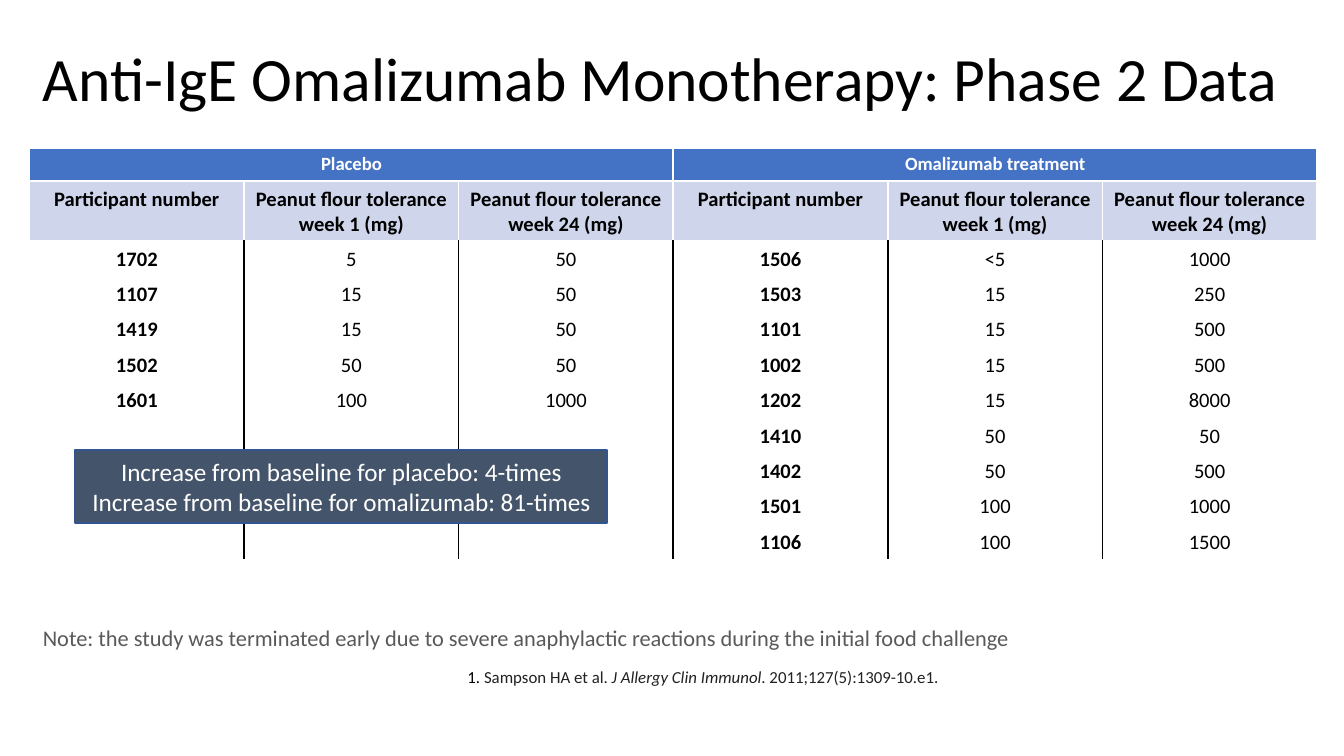
"""Build the omalizumab phase 2 data slide with its tolerance table."""
from itertools import zip_longest

from lxml import etree
from pptx import Presentation
from pptx.dml.color import RGBColor
from pptx.enum.shapes import MSO_SHAPE
from pptx.enum.text import MSO_ANCHOR, PP_ALIGN
from pptx.oxml.ns import qn
from pptx.util import Inches, Pt

CENTER, LEFT = PP_ALIGN.CENTER, PP_ALIGN.LEFT
MIDDLE, TOP = MSO_ANCHOR.MIDDLE, MSO_ANCHOR.TOP
RECTANGLE = MSO_SHAPE.RECTANGLE
FONT = "Calibri"
BLACK = RGBColor(0x00, 0x00, 0x00)
WHITE = RGBColor(0xFF, 0xFF, 0xFF)
BLUE = RGBColor(0x44, 0x72, 0xC4)
PALE_BLUE = RGBColor(0xCF, 0xD5, 0xEA)
SLATE = RGBColor(0x44, 0x54, 0x6A)
NAVY = RGBColor(0x32, 0x54, 0x91)
GRAY = RGBColor(0x59, 0x59, 0x59)
INK = RGBColor(0x21, 0x21, 0x21)

SLIDE_W = 10
SLIDE_H = SLIDE_W * 9 / 16
MARGIN, CONTENT_W = 0.22, 9.58
TABLE_TOP = 1.1
GROUP_H, HEADING_H, ROW_H = 0.24, 0.42, 0.26

TITLE = "Anti-IgE Omalizumab Monotherapy: Phase 2 Data"
NOTE = ("Note: the study was terminated early due to severe anaphylactic "
        "reactions during the initial food challenge")
CITATION = [
    ("1. ", BLACK, False),
    ("Sampson HA et al.\u00a0", INK, False),
    ("J Allergy Clin Immunol", INK, True),
    (". 2011;127(5):1309-10.e1.", INK, False),
]
SUMMARY = [
    "Increase from baseline for placebo: 4-times",
    "Increase from baseline for omalizumab: 81-times",
]
HEADINGS = [
    "Participant number",
    "Peanut flour tolerance week 1 (mg)",
    "Peanut flour tolerance week 24 (mg)",
]
GROUPS = {
    "Placebo": [
        ("1702", "5", "50"),
        ("1107", "15", "50"),
        ("1419", "15", "50"),
        ("1502", "50", "50"),
        ("1601", "100", "1000"),
    ],
    "Omalizumab treatment": [
        ("1506", "<5", "1000"),
        ("1503", "15", "250"),
        ("1101", "15", "500"),
        ("1002", "15", "500"),
        ("1202", "15", "8000"),
        ("1410", "50", "50"),
        ("1402", "50", "500"),
        ("1501", "100", "1000"),
        ("1106", "100", "1500"),
    ],
}


def add_run(p, text, size, color, bold=False, italic=False):
    r = p.add_run()
    r.text = text
    r.font.name, r.font.size = FONT, Pt(size)
    r.font.bold, r.font.italic = bold, italic
    r.font.color.rgb = color


def add_text(slide, box, runs, size, anchor=TOP):
    tf = slide.shapes.add_textbox(*map(Inches, box)).text_frame
    tf.word_wrap = True
    tf.vertical_anchor = anchor
    p = tf.paragraphs[0]
    p.alignment, p.line_spacing = LEFT, 0.9
    for text, color, italic in runs:
        add_run(p, text, size, color, italic=italic)


def set_border(cell, side, color):
    tc_pr = cell._tc.get_or_add_tcPr()
    ln = etree.SubElement(tc_pr, qn(f"a:ln{side}"), w=str(Pt(1)))
    if color is None:
        etree.SubElement(ln, qn("a:noFill"))
    else:
        fill = etree.SubElement(ln, qn("a:solidFill"))
        etree.SubElement(fill, qn("a:srgbClr"), val=str(color))


def fill_cell(cell, text, size, color, bold, fill, borders=(WHITE,) * 4):
    cell.margin_left = cell.margin_right = Inches(0.07)
    cell.margin_top = cell.margin_bottom = Inches(0.04)
    for side, line in zip("LRTB", borders):
        set_border(cell, side, line)
    cell.fill.solid()
    cell.fill.fore_color.rgb = fill
    p = cell.text_frame.paragraphs[0]
    p.alignment = CENTER
    if text:
        add_run(p, text, size, color, bold)
    else:
        etree.SubElement(p._p, qn("a:endParaRPr"), sz=str(size * 100))


def add_tolerance_table(slide):
    span = len(HEADINGS)
    cols = span * len(GROUPS)
    blank = ("",) * span
    data = [sum(parts, ()) for parts in zip_longest(*GROUPS.values(), fillvalue=blank)]
    heights = [GROUP_H, HEADING_H] + [ROW_H] * len(data)
    table = slide.shapes.add_table(
        len(heights), cols, Inches(MARGIN), Inches(TABLE_TOP),
        Inches(CONTENT_W), Inches(sum(heights))).table
    for row, height in zip(table.rows, heights):
        row.height = Inches(height)
    for i, name in enumerate(GROUPS):
        first = table.cell(0, i * span)
        first.merge(table.cell(0, (i + 1) * span - 1))
        fill_cell(first, name, 10, WHITE, True, BLUE)
    for c, heading in enumerate(HEADINGS * len(GROUPS)):
        fill_cell(table.cell(1, c), heading, 11, BLACK, True, PALE_BLUE)
    for r, values in enumerate(data, start=2):
        for c, value in enumerate(values):
            borders = (BLACK if c else WHITE,
                       BLACK if c < cols - 1 else WHITE,
                       WHITE if r == 2 else None,
                       WHITE if r == len(heights) - 1 else None)
            fill_cell(table.cell(r, c), value, 11, BLACK, c % span == 0, WHITE, borders)


def add_summary(slide):
    s = slide.shapes.add_shape(RECTANGLE, *map(Inches, (0.56, 3.35, 3.96, 0.54)))
    s.shadow.inherit = False
    s.fill.solid()
    s.fill.fore_color.rgb = SLATE
    s.line.color.rgb = NAVY
    s.line.width = Pt(1)
    tf = s.text_frame
    tf.word_wrap = True
    tf.vertical_anchor = MIDDLE
    tf.text = "\n".join(SUMMARY)
    for p in tf.paragraphs:
        p.alignment = CENTER
        font = p.runs[0].font
        font.name, font.size = FONT, Pt(13.5)
        font.color.rgb = WHITE


def main():
    prs = Presentation()
    prs.slide_width, prs.slide_height = Inches(SLIDE_W), Inches(SLIDE_H)
    slide = prs.slides.add_slide(prs.slide_layouts[6])
    add_text(slide, (MARGIN, 0.14, CONTENT_W, 0.94), [(TITLE, BLACK, False)], 33, MIDDLE)
    add_text(slide, (3.38, 4.93, 6.62, 0.6), CITATION, 9)
    add_text(slide, (MARGIN, 4.62, CONTENT_W, 0.22), [(NOTE, GRAY, False)], 12)
    add_tolerance_table(slide)
    add_summary(slide)
    prs.save("out.pptx")


if __name__ == "__main__":
    main()
